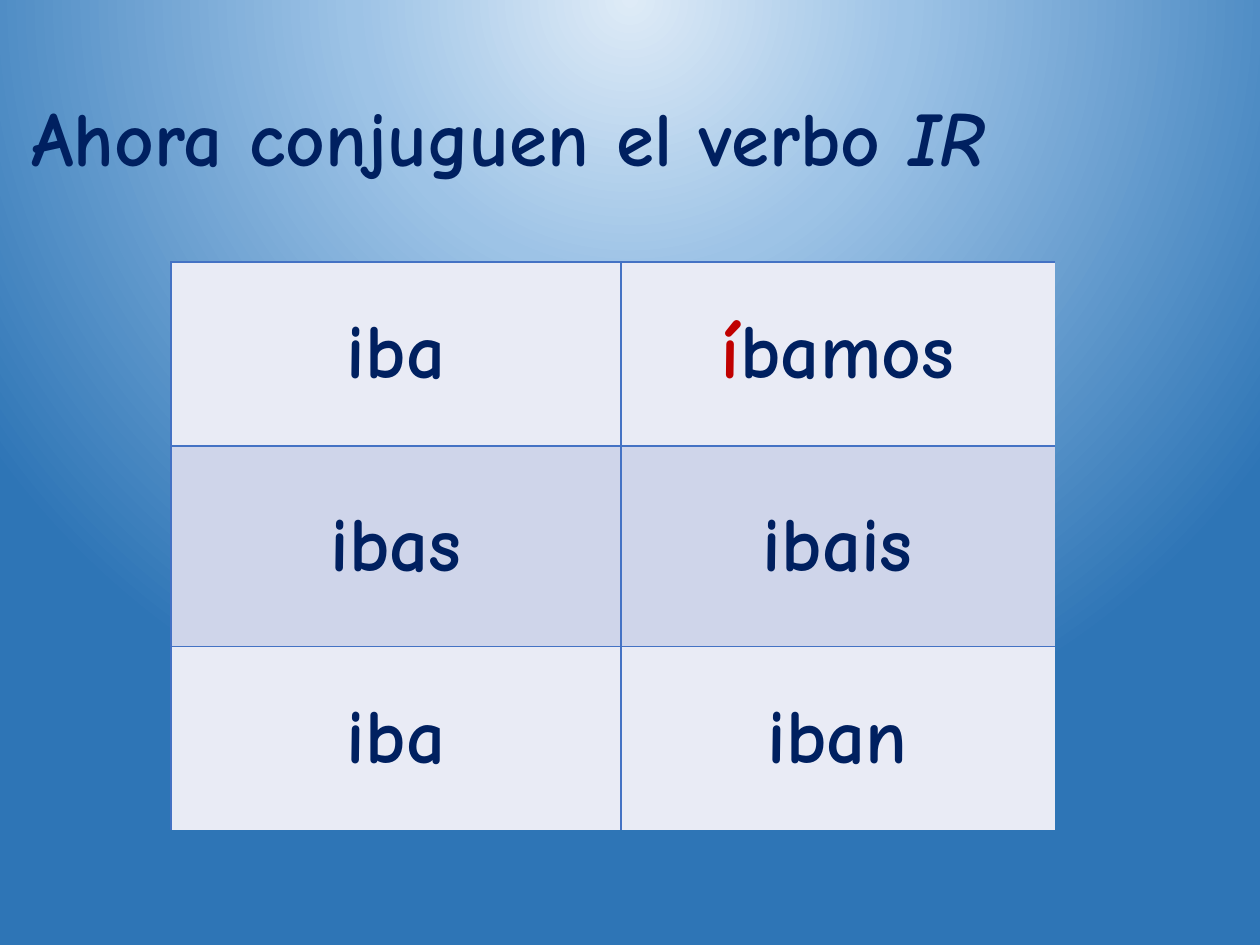
from pptx import Presentation
from pptx.dml.color import RGBColor
from pptx.enum.text import MSO_ANCHOR, MSO_AUTO_SIZE, PP_ALIGN
from pptx.oxml import parse_xml
from pptx.oxml.ns import nsdecls
from pptx.util import Cm, Pt

NAVY, RED, BORDER = "002060", "C00000", "4472C4"
BANDS = ["E9EBF5", "CFD5EA"]
FORMS = [["iba", "íbamos"], ["ibas", "ibais"], ["iba", "iban"]]
COLUMN_WIDTHS = [Cm(9.07), Cm(8.74)]
ROW_HEIGHTS = [Cm(3.71), Cm(4.04), Cm(3.71)]


def style_span(span, color=NAVY):
    span.font.name = "Comic Neue"
    span.font.size = Pt(44)
    span.font.bold = True
    span.font.color.rgb = RGBColor.from_string(color)


def add_border(cell, side, visible):
    fill = f'<a:solidFill><a:srgbClr val="{BORDER}"/></a:solidFill>' if visible else "<a:noFill/>"
    cell._tc.get_or_add_tcPr().append(parse_xml(
        f'<a:ln{side} {nsdecls("a")} w="{Pt(1)}">{fill}</a:ln{side}>'))


deck = Presentation()
deck.slide_width, deck.slide_height = Cm(25.4), Cm(19.05)
page = deck.slides.add_slide(deck.slide_layouts[5])

# Radial background, centred above the top edge
stops = "".join(
    f'<a:gs pos="{position * 1000}"><a:srgbClr val="{color}"/></a:gs>'
    for position, color in [(0, "DEEBF7"), (35, "9DC3E6"), (100, "2E75B6")])
page._element.cSld.insert(0, parse_xml(
    f'<p:bg {nsdecls("p", "a")}><p:bgPr><a:gradFill rotWithShape="1"><a:gsLst>{stops}</a:gsLst>'
    '<a:path path="circle"><a:fillToRect l="50000" t="-80000" r="50000" b="180000"/></a:path>'
    '</a:gradFill><a:effectLst/></p:bgPr></p:bg>'))

title = page.shapes.title
title.left, title.top, title.width, title.height = Cm(0.38), Cm(1.68), Cm(24.79), Cm(2.13)
title.text_frame.word_wrap = True
title.text_frame.auto_size = MSO_AUTO_SIZE.SHAPE_TO_FIT_TEXT
title.text_frame.vertical_anchor = MSO_ANCHOR.TOP
para = title.text_frame.paragraphs[0]
para.alignment = PP_ALIGN.LEFT
for text, italic in [("Ahora conjuguen el verbo ", False), ("IR", True)]:
    span = para.add_run()
    span.text = text
    style_span(span)
    span.font.italic = italic

table = page.shapes.add_table(
    len(ROW_HEIGHTS), len(COLUMN_WIDTHS), Cm(3.45), Cm(5.28),
    sum(COLUMN_WIDTHS), sum(ROW_HEIGHTS)).table
table.first_row = False
for column, width in zip(table.columns, COLUMN_WIDTHS):
    column.width = width
for row, height in zip(table.rows, ROW_HEIGHTS):
    row.height = height

for row_index, forms in enumerate(FORMS):
    for column_index, form in enumerate(forms):
        cell = table.cell(row_index, column_index)
        # The outer right and bottom edges stay open
        add_border(cell, "L", True)
        add_border(cell, "R", column_index < len(forms) - 1)
        add_border(cell, "T", True)
        add_border(cell, "B", row_index < len(FORMS) - 1)
        cell.fill.solid()
        cell.fill.fore_color.rgb = RGBColor.from_string(BANDS[row_index % 2])
        cell.vertical_anchor = MSO_ANCHOR.MIDDLE
        para = cell.text_frame.paragraphs[0]
        para.alignment = PP_ALIGN.CENTER
        # The accented first letter is picked out in red
        parts = [("í", RED), (form[1:], NAVY)] if form.startswith("í") else [(form, NAVY)]
        for text, color in parts:
            span = para.add_run()
            span.text = text
            style_span(span, color)

deck.save("out.pptx")
